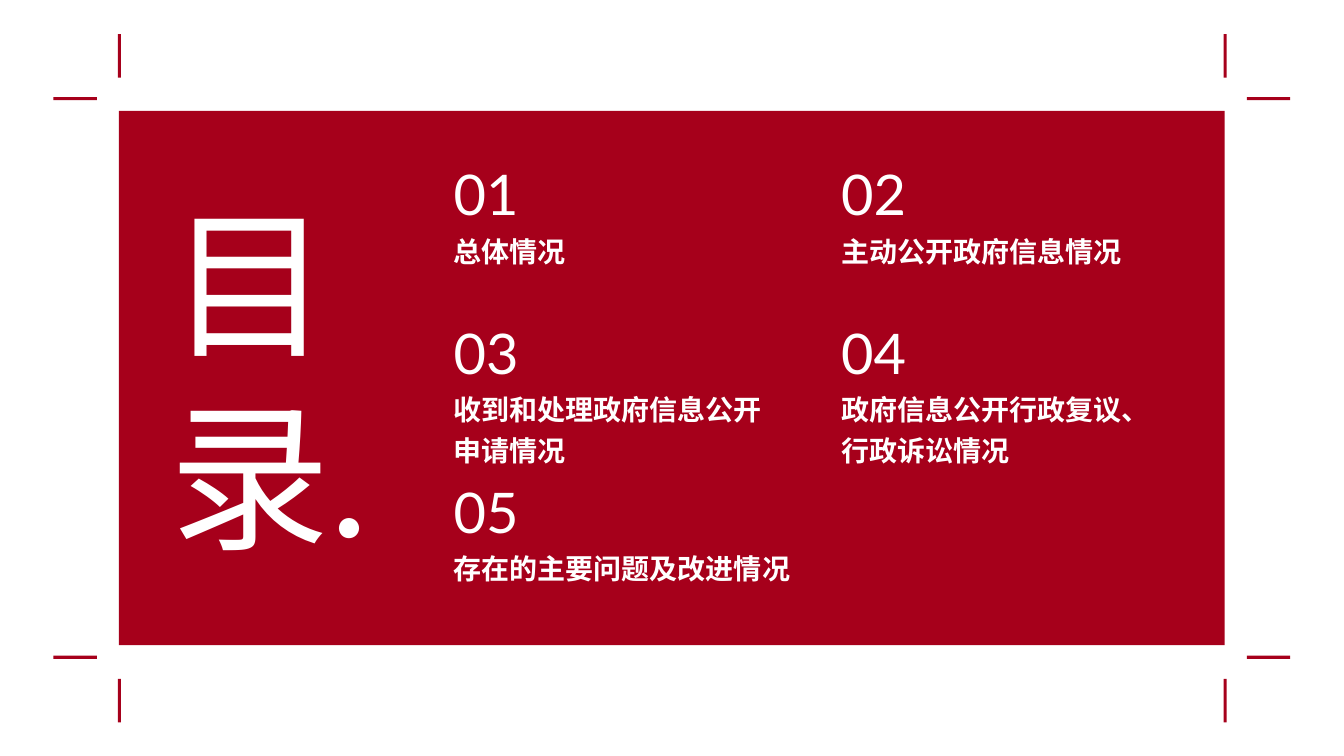
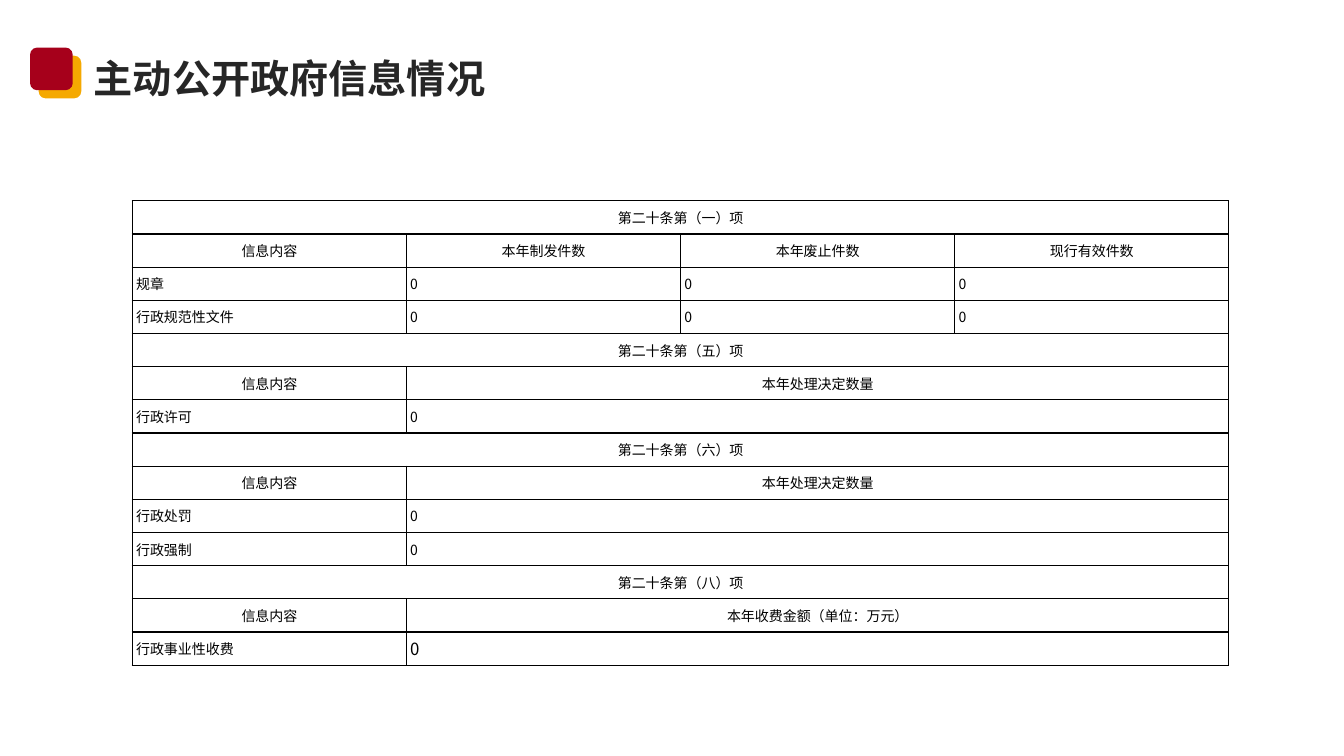
from pptx import Presentation
from pptx.dml.color import RGBColor
from pptx.enum.shapes import MSO_SHAPE
from pptx.enum.text import MSO_ANCHOR, PP_ALIGN
from pptx.oxml.ns import qn
from pptx.util import Pt
from lxml import etree

RED = RGBColor(0xA6, 0x00, 0x1B)
GOLD = RGBColor(0xF5, 0xA9, 0x01)
INK = RGBColor(0x26, 0x26, 0x26)
BLACK = RGBColor(0, 0, 0)
WHITE = RGBColor(255, 255, 255)
LATO, NOTO = "Lato", "Noto Sans CJK SC"
RECT, ROUND = MSO_SHAPE.RECTANGLE, MSO_SHAPE.ROUNDED_RECTANGLE
MID = MSO_ANCHOR.MIDDLE
LEFT, CENTER = PP_ALIGN.LEFT, PP_ALIGN.CENTER

TOPICS = [
    ["总体情况"],
    ["主动公开政府信息情况"],
    ["收到和处理政府信息公开", "申请情况"],
    ["政府信息公开行政复议、", "行政诉讼情况"],
    ["存在的主要问题及改进情况"],
]
TITLE = "主动公开政府信息情况"
HEAD, ITEM = "信息内容", "本年处理决定数量"
ROWS = [
    ["第二十条第（一）项"],
    [HEAD, "本年制发件数", "本年废止件数", "现行有效件数"],
    ["规章", "0", "0", "0"],
    ["行政规范性文件", "0", "0", "0"],
    ["第二十条第（五）项"],
    [HEAD, ITEM],
    ["行政许可", "0"],
    ["第二十条第（六）项"],
    [HEAD, ITEM],
    ["行政处罚", "0"],
    ["行政强制", "0"],
    ["第二十条第（八）项"],
    [HEAD, "本年收费金额（单位：万元）"],
    ["行政事业性收费", "0"],
]
COLS = 4
COL_W, ROW_H = 195.84, 23.7


def style(para, size, color, face=NOTO, bold=False):
    font = para.font
    font.size, font.bold, font.name = Pt(size), bold, face
    font.color.rgb = color
    props = para._p.pPr.find(qn("a:defRPr"))
    etree.SubElement(props, qn("a:ea")).set("typeface", NOTO)


def block(slide, kind, color, x, y, w, h):
    shape = slide.shapes.add_shape(kind, Pt(x), Pt(y), Pt(w), Pt(h))
    shape.shadow.inherit = False
    shape.fill.solid()
    shape.fill.fore_color.rgb = color
    shape.line.fill.background()


def text(slide, lines, x, y, w, h, size, color, face=NOTO,
         bold=False, space=None, pad=0, anchor=MSO_ANCHOR.TOP):
    frame = slide.shapes.add_textbox(Pt(x), Pt(y), Pt(w), Pt(h)).text_frame
    frame.word_wrap = True
    frame.vertical_anchor = anchor
    frame.margin_left = frame.margin_right = Pt(pad)
    frame.margin_top = frame.margin_bottom = Pt(pad / 2)
    frame.text = "\n".join(lines)
    for para in frame.paragraphs:
        para.line_spacing = space
        style(para, size, color, face, bold)


def border(cell):
    props = cell._tc.get_or_add_tcPr()
    for i, side in enumerate(("lnL", "lnR", "lnT", "lnB")):
        line = etree.Element(qn("a:" + side), w=str(Pt(1)))
        fill = etree.SubElement(line, qn("a:solidFill"))
        etree.SubElement(fill, qn("a:srgbClr"), val=str(BLACK))
        props.insert(i, line)


def agenda(slide):
    for x in (38.2, 890.6):
        for y in (69.4, 468.4):
            block(slide, RECT, RED, x, y, 31, 2.2)
    for x in (84.2, 874):
        for y in (24.4, 485):
            block(slide, RECT, RED, x, y, 2.2, 31)
    block(slide, RECT, RED, 85, 79.2, 789.8, 381.6)
    text(slide, ["目录."], 113.8, 127.4, 146.9, 352, 115, WHITE, LATO, pad=7.2)
    for i, lines in enumerate(TOPICS):
        row, col = divmod(i, 2)
        x, y = 324 + 276.8 * col, 113.8 + 113.5 * row
        text(slide, [f"{i + 1:02}"], x, y, 85, 45.4, 40, WHITE, LATO)
        text(slide, lines, x, y + 48.6, 260, 57, 20, WHITE,
             bold=True, space=1.2)


def report(slide):
    text(slide, [TITLE], 67, 35.3, 840, 36.7, 28, INK,
         bold=True, space=1.1, anchor=MID)
    for color, x, y in ((GOLD, 27.6, 39.8), (RED, 21.5, 34)):
        block(slide, ROUND, color, x, y, 30.5, 30.5)
    table = slide.shapes.add_table(
        len(ROWS), COLS, Pt(94.5), Pt(143.4),
        Pt(COLS * COL_W), Pt(len(ROWS) * ROW_H)).table
    table.first_row = table.horz_banding = False
    for col in table.columns:
        col.width = Pt(COL_W)
    for r, words in enumerate(ROWS):
        table.rows[r].height = Pt(ROW_H)
        mid = len(words) == 1 or words[0] == HEAD
        for c in range(COLS):
            cell = table.cell(r, c)
            cell.fill.background()
            border(cell)
            cell.margin_left = cell.margin_right = Pt(2.7)
            cell.margin_top = cell.margin_bottom = 0
            cell.vertical_anchor = MID
            if c < len(words):
                cell.text = words[c]
            para = cell.text_frame.paragraphs[0]
            para.alignment = CENTER if mid else LEFT
            last = r == len(ROWS) - 1 and c > 0
            style(para, 12 if last else 10, BLACK)
        if len(words) < COLS:
            table.cell(r, len(words) - 1).merge(table.cell(r, COLS - 1))


def main():
    deck = Presentation()
    deck.slide_width, deck.slide_height = Pt(960), Pt(540)
    for draw in (agenda, report):
        draw(deck.slides.add_slide(deck.slide_layouts[6]))
    deck.save("out.pptx")


if __name__ == "__main__":
    main()
